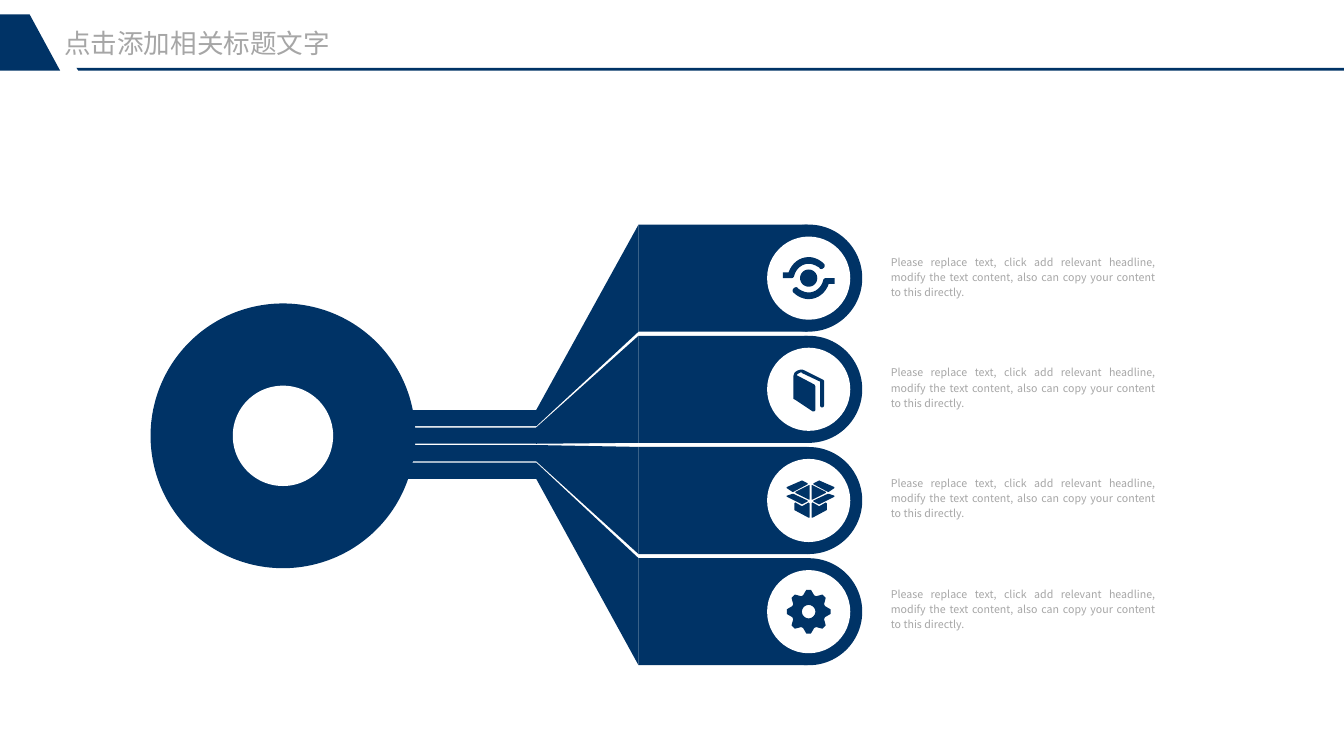
"""Build a slide with a ring that fans out into four branches with icons."""
from math import cos, radians, sin

from pptx import Presentation
from pptx.dml.color import RGBColor
from pptx.enum.shapes import MSO_SHAPE
from pptx.enum.text import MSO_ANCHOR, PP_ALIGN
from pptx.util import Inches, Pt

TITLE = "点击添加相关标题文字"
BODY = ("Please replace text, click add relevant headline, modify the text "
        "content, also can copy your content to this directly.")
COLORS = {"navy": "003366", "white": "FFFFFF", "gray": "A6A6A6"}
TITLE_FORMAT = {"size": Pt(20), "name": "Arial"}
BODY_FORMAT = {"size": Pt(8), "name": "Noto Sans CJK SC"}

HEADER_TAB = [(0.31, 0.15), (0.63, 0.74), (0, 0.74), (0, 0.15)]
HEADER_RULE = [(0.8, 0.71), (14.06, 0.71), (14.06, 0.74), (0.82, 0.74)]
RING_CENTER, RING_SIZE, HOLE_SIZE = (2.96, 4.56), 2.77, 1.05

COUNT = 4
BAR_TOP, BAR_SPAN, BAR_H = 2.35, 3.49, 1.12
STEM_TOP, STEM_SPAN, STEM_H = 4.29, 0.55, 0.17
TEXT_TOP, TEXT_SPAN = 2.65, 3.47
STEM_X, WEDGE_X, BAR_X, BAR_W = 4.27, 5.61, 6.68, 1.77
BADGE_X, BADGE_SIZE = 8.46, 0.87

SWIRL = [(-27, -6), (-21, -6), (-18, -15, -10, -22, 0, -22),
         (6, -22, 12, -19, 16, -15), (17, -14, 17, -12, 16, -11),
         (14, -9, 12, -9, 11, -11), (8, -13, 4, -15, 0, -15),
         (-7, -15, -13, -10, -15, -3), (-15, -2, -16, 0, -18, 0), (-27, 0)]
BOOK = [(15, -10), (-5, -20), (-8, -22, -14, -19, -15, -17), (-16, -14),
        (-16, 10), (-14, 11), (4, 23), (6, 23), (7, 22), (7, -3), (6, -5),
        (-13, -15), (-12, -15, -12, -16, -10, -17),
        (-8, -18, -7, -18, -7, -17), (12, -8), (12, 17),
        (12, 18, 13, 19, 14, 19), (15, 19, 16, 18, 16, 17), (16, -9)]
BOX_HALF = [
    [(1, -16), (1, -1), (2, -1), (16, -8), (16, -9), (2, -16)],
    [(25, -5), (25, -4), (9, 4), (3, 1), (3, 0), (18, -7), (19, -7)],
    [(25, -14), (25, -13), (19, -9), (18, -9), (3, -17), (3, -18), (9, -21)],
    [(1, 3), (1, 18), (2, 18), (17, 10), (17, 3), (16, 2), (9, 6), (2, 2)],
]
BOX_SHIFT = 2
GEAR_TEETH, GEAR_HOLE, EYE_RADIUS = 8, 7, 9
TOOTH = [(-19, 18), (-6, 23), (6, 23), (19, 18)]


def polar(angle, radius):
    return radius * cos(radians(angle)), radius * sin(radians(angle))


def circle(radius):
    return [polar(-a, radius) for a in range(0, 360, 10)]


def flatten(outline, steps=8):
    points = []
    for item in outline:
        if len(item) == 2:
            points.append(item)
            continue
        ctrl = (points[-1], item[:2], item[2:4], item[4:])
        for n in range(1, steps + 1):
            t = n / steps
            weights = ((1 - t) ** 3, 3 * t * (1 - t) ** 2,
                       3 * t * t * (1 - t), t ** 3)
            points.append(tuple(sum(w * c[k] for w, c in zip(weights, ctrl))
                                for k in (0, 1)))
    return points


def make_icons():
    swirl = flatten(SWIRL)
    eye = [swirl, [(-x, -y) for x, y in swirl], circle(EYE_RADIUS)]
    box = [[(BOX_SHIFT + side * x, y) for x, y in panel]
           for panel in BOX_HALF for side in (-1, 1)]
    gear = [polar(n * 360 / GEAR_TEETH + a, radius)
            for n in range(GEAR_TEETH) for a, radius in TOOTH]
    return [eye, [flatten(BOOK)], box, [gear, circle(GEAR_HOLE)]]


def paint(sp, color):
    sp.shadow.inherit = False
    sp.fill.solid()
    sp.fill.fore_color.rgb = RGBColor.from_string(COLORS[color])
    sp.line.fill.background()


def add_preset(shapes, kind, x, y, w, h, color="navy"):
    sp = shapes.add_shape(kind, Inches(x), Inches(y), Inches(w), Inches(h))
    paint(sp, color)


def add_disc(shapes, x, y, size, color="navy"):
    add_preset(shapes, MSO_SHAPE.OVAL, x - size / 2, y - size / 2,
               size, size, color)


def add_outline(shapes, contours):
    contours = [[(Inches(x), Inches(y)) for x, y in c] for c in contours]
    builder = shapes.build_freeform(*contours[0][0])
    for n, points in enumerate(contours):
        if n:
            builder.move_to(*points[0])
        builder.add_line_segments(points[1:], close=True)
    paint(builder.convert_to_shape(), "navy")


def write(sp, text, box, fmt, align, anchor):
    sp.left, sp.top, sp.width, sp.height = map(Inches, box)
    tf = sp.text_frame
    tf.word_wrap = True
    tf.vertical_anchor = anchor
    tf.margin_left = tf.margin_top = tf.margin_right = tf.margin_bottom = 0
    p = tf.paragraphs[0]
    p.alignment = align
    r = p.add_run()
    r.text = text
    for key, value in fmt.items():
        setattr(r.font, key, value)
    r.font.color.rgb = RGBColor.from_string(COLORS["gray"])
    return p


def add_branch(slide, index, icon):
    step = index / (COUNT - 1)
    bar = BAR_TOP + BAR_SPAN * step
    stem = STEM_TOP + STEM_SPAN * step
    mid = bar + BAR_H / 2
    shapes = slide.shapes.add_group_shape().shapes
    add_preset(shapes, MSO_SHAPE.RECTANGLE, BAR_X, bar, BAR_W, BAR_H)
    add_preset(shapes, MSO_SHAPE.RECTANGLE, STEM_X, stem,
               WEDGE_X - STEM_X, STEM_H)
    add_outline(shapes, [[(WEDGE_X, stem), (BAR_X, bar), (BAR_X, bar + BAR_H),
                          (WEDGE_X, stem + STEM_H)]])
    add_disc(shapes, BADGE_X, mid, BAR_H)
    add_disc(shapes, BADGE_X, mid, BADGE_SIZE, "white")
    add_outline(shapes, [[(BADGE_X + x / 100, mid + y / 100) for x, y in c]
                         for c in icon])
    box = (9.32, TEXT_TOP + TEXT_SPAN * step, 2.77, 0.47)
    sp = slide.shapes.add_textbox(0, 0, 0, 0)
    p = write(sp, BODY, box, BODY_FORMAT, PP_ALIGN.JUSTIFY, MSO_ANCHOR.TOP)
    p.line_spacing = 1.2


def main():
    prs = Presentation()
    prs.slide_width, prs.slide_height = Inches(14.06), Inches(7.91)
    slide = prs.slides.add_slide(prs.slide_layouts[5])
    write(slide.shapes.title, TITLE, (0.67, 0.28, 3.35, 0.34),
          TITLE_FORMAT, PP_ALIGN.LEFT, MSO_ANCHOR.MIDDLE)
    for index, icon in enumerate(make_icons()):
        add_branch(slide, index, icon)
    ring = slide.shapes.add_group_shape().shapes
    add_disc(ring, *RING_CENTER, RING_SIZE)
    add_disc(ring, *RING_CENTER, HOLE_SIZE, "white")
    for outline in (HEADER_RULE, HEADER_TAB):
        add_outline(slide.shapes, [outline])
    prs.save("out.pptx")


if __name__ == "__main__":
    main()
